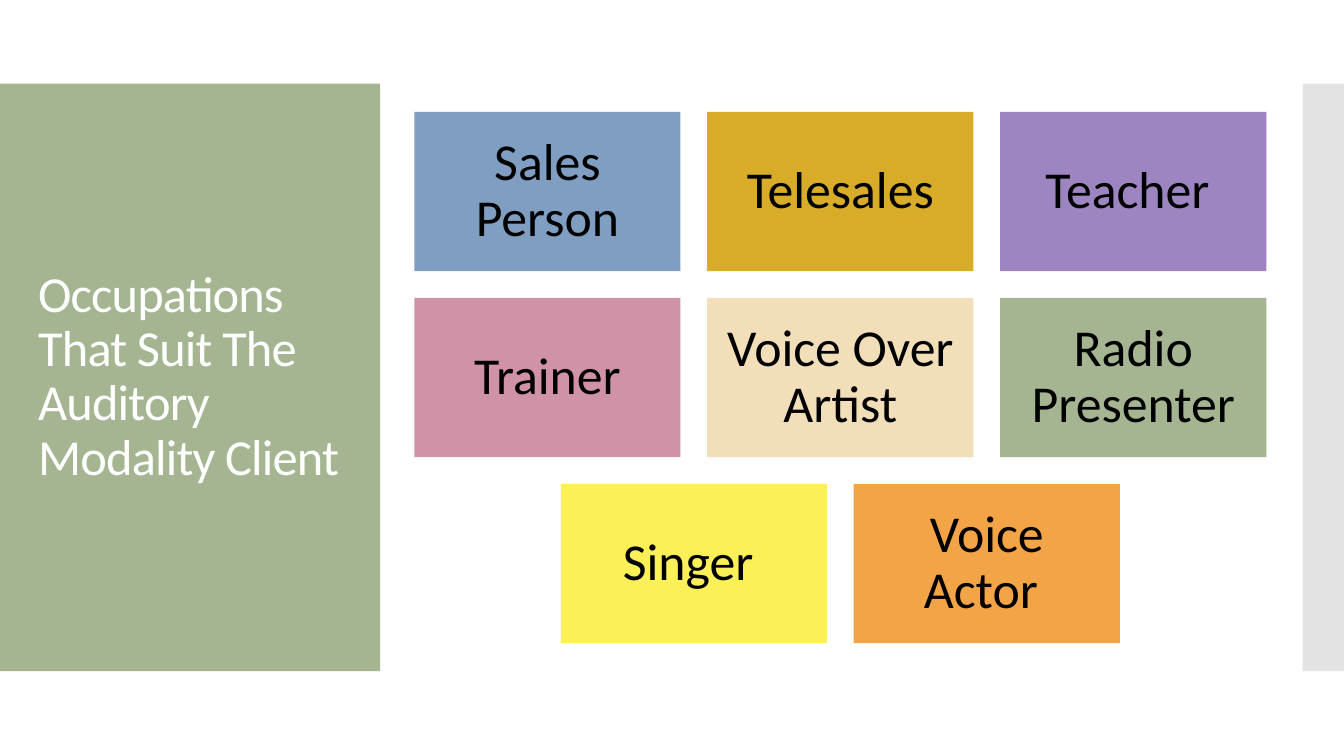
"""Build a slide of occupations that suit the auditory modality client."""
import dataclasses
import typing

import lxml.etree
import pptx
import pptx.dml.color
import pptx.enum.shapes
import pptx.enum.text
import pptx.oxml.ns
import pptx.util


@dataclasses.dataclass(frozen=True)
class Theme:
    font: str = "Calibri"
    title_size: int = 36
    card_size: int = 37
    title_color: str = "FFFFFF"
    card_color: str = "000000"
    panel: str = "A5B592"
    strip: str = "C8C8C8"


@dataclasses.dataclass(frozen=True)
class Grid:
    left: float = 4.11
    top: float = 1.11
    width: float = 2.64
    height: float = 1.58
    gap: float = 0.265
    columns: int = 3


class Box(typing.NamedTuple):
    left: float
    top: float
    width: float
    height: float


class Card(typing.NamedTuple):
    text: str
    fill: str


THEME = Theme()
GRID = Grid()
WIDTH, HEIGHT = 13.33, 7.5
PANEL = Box(0, 0.83, 3.77, 5.83)
STRIP = Box(12.92, 0.83, WIDTH - 12.92, 5.83)
TITLE = Box(0.28, 1.23, 3.22, 5.03)
CARDS = [
    Card("Sales Person", "809EC2"),
    Card("Telesales", "D8AC29"),
    Card("Teacher ", "9C85C0"),
    Card("Trainer", "D092A7"),
    Card("Voice Over Artist", "F2DFBA"),
    Card("Radio Presenter", "A5B592"),
    Card("Singer ", "FCF059"),
    Card("Voice Actor ", "F3A447"),
]


def inches(box: Box) -> list[pptx.util.Length]:
    """Convert a box to slide lengths."""
    return [pptx.util.Inches(value) for value in box]


def add_rect(s, box: Box, fill: str, alpha: int = 100):
    """Draw a plain filled rectangle."""
    sp = s.shapes.add_shape(pptx.enum.shapes.MSO_SHAPE.RECTANGLE, *inches(box))
    sp.shadow.inherit = False
    sp.line.fill.background()
    sp.fill.solid()
    sp.fill.fore_color.rgb = pptx.dml.color.RGBColor.from_string(fill)
    if alpha < 100:
        qn = pptx.oxml.ns.qn
        color = sp._element.spPr.find(qn("a:solidFill")).find(qn("a:srgbClr"))
        lxml.etree.SubElement(color, qn("a:alpha")).set("val", str(alpha * 1000))
    return sp


def set_text(sp, text: str, *, size: int, color: str, align: str = "LEFT",
             inset: float = 0.1, spacing: int = 0) -> None:
    """Put one formatted paragraph in a shape."""
    tf = sp.text_frame
    tf.word_wrap = True
    tf.vertical_anchor = pptx.enum.text.MSO_ANCHOR.MIDDLE
    tf.margin_left = tf.margin_right = pptx.util.Inches(inset)
    tf.margin_top = tf.margin_bottom = pptx.util.Inches(inset)
    p = tf.paragraphs[0]
    p.alignment = pptx.enum.text.PP_ALIGN[align]
    p.line_spacing = 0.9
    r = p.add_run()
    r.text = text
    r.font.name = THEME.font
    r.font.size = pptx.util.Pt(size)
    r.font.color.rgb = pptx.dml.color.RGBColor.from_string(color)
    if spacing:
        r.font._element.set("spc", str(spacing))


def card_box(index: int) -> Box:
    """Place a card in its row, centring a short last row."""
    row, col = divmod(index, GRID.columns)
    in_row = min(GRID.columns, len(CARDS) - row * GRID.columns)
    shift = (GRID.columns - in_row) / 2
    return Box(GRID.left + (col + shift) * (GRID.width + GRID.gap),
               GRID.top + row * (GRID.height + GRID.gap),
               GRID.width, GRID.height)


def main() -> None:
    """Build and save the slide."""
    prs = pptx.Presentation()
    prs.slide_width = pptx.util.Inches(WIDTH)
    prs.slide_height = pptx.util.Inches(HEIGHT)
    s = prs.slides.add_slide(prs.slide_layouts[6])
    add_rect(s, PANEL, THEME.panel)
    add_rect(s, STRIP, THEME.strip, alpha=50)
    set_text(s.shapes.add_textbox(*inches(TITLE)),
             "Occupations That Suit The Auditory Modality Client",
             size=THEME.title_size, color=THEME.title_color, spacing=-60)
    for index, card in enumerate(CARDS):
        set_text(add_rect(s, card_box(index), card.fill), card.text,
                 size=THEME.card_size, color=THEME.card_color,
                 align="CENTER", inset=0.15)
    prs.save("out.pptx")


if __name__ == "__main__":
    main()
